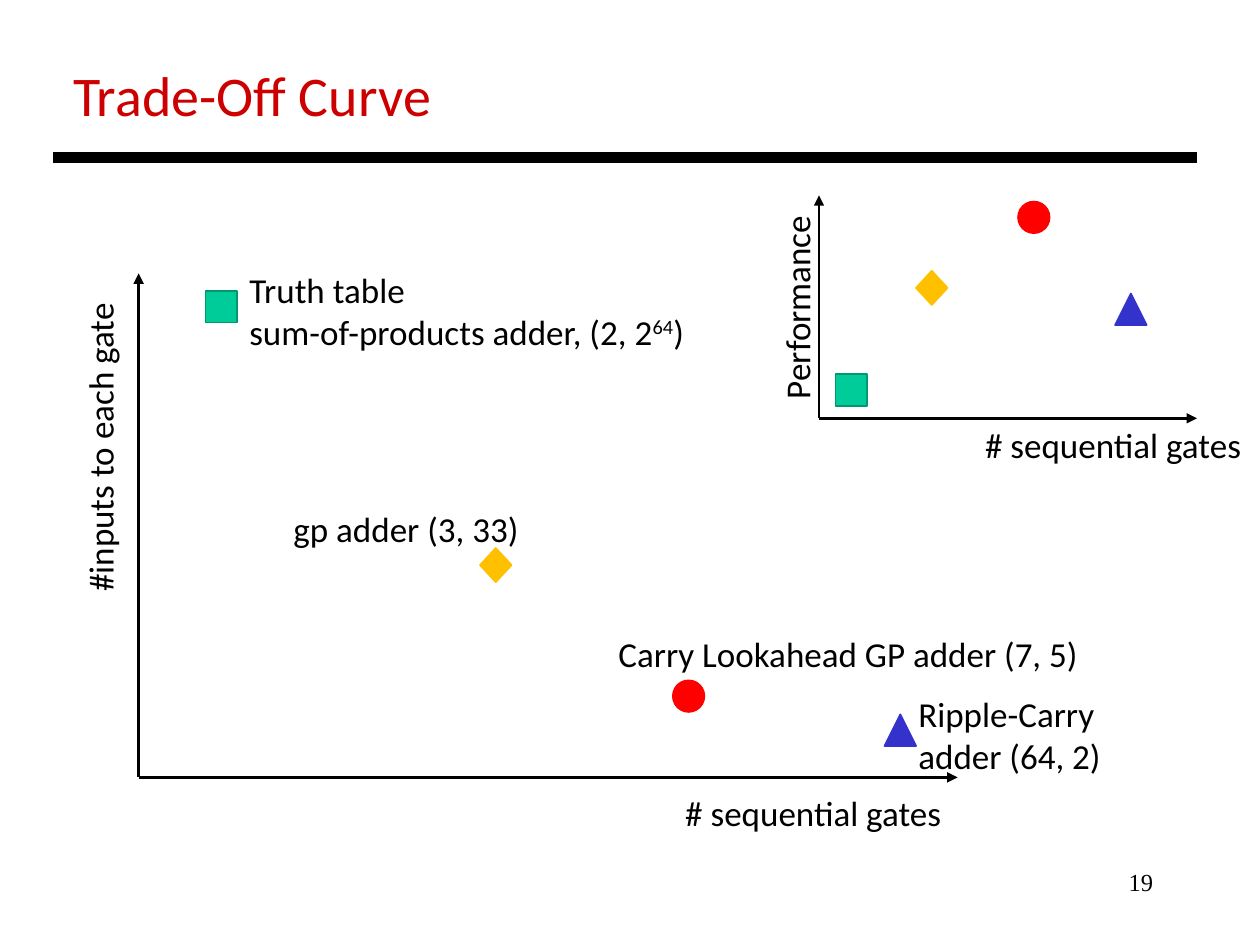
from pptx import Presentation
from pptx.dml.color import RGBColor
from pptx.enum.shapes import MSO_CONNECTOR, MSO_SHAPE
from pptx.enum.text import MSO_ANCHOR, PP_ALIGN
from pptx.oxml.ns import qn
from pptx.util import Inches, Pt
from lxml import etree

COLORS = {
    "black": "000000", "title": "CC0000", "green": "00CC99", "green_edge": "009771",
    "blue": "3333CC", "red": "FF0000", "amber": "FFC000",
}

# One marker per adder: shape, fill, line, height
MARKERS = {
    "truth_table": (MSO_SHAPE.RECTANGLE, "green", "green_edge", 0.25),
    "gp": (MSO_SHAPE.DIAMOND, "amber", "amber", 0.27),
    "lookahead": (MSO_SHAPE.OVAL, "red", "red", 0.25),
    "ripple": (MSO_SHAPE.ISOSCELES_TRIANGLE, "blue", "blue", 0.25),
}


def rgb(name):
    return RGBColor.from_string(COLORS[name])


def write(tf, text, size=20, font="Calibri", color="black", align=PP_ALIGN.LEFT, wrap=False):
    """Fill a text frame; lines split at newlines, ^ toggles superscript."""
    tf.word_wrap = wrap
    tf.vertical_anchor = MSO_ANCHOR.TOP
    for i, line in enumerate(text.split("\n")):
        p = tf.paragraphs[0] if i == 0 else tf.add_paragraph()
        p.alignment = align
        for j, part in enumerate(line.split("^")):
            r = p.add_run()
            r.text = part
            r.font.size = Pt(size)
            r.font.name = font
            r.font.color.rgb = rgb(color)
            if j % 2:
                r._r.get_or_add_rPr().set("baseline", "30000")


class SlideBuilder:
    def __init__(self, slide):
        self.s = slide

    def title(self, text, x, y, w, h):
        sp = self.s.shapes.title
        sp.left, sp.top, sp.width, sp.height = map(Inches, (x, y, w, h))
        write(sp.text_frame, text, size=32, color="title")

    def text(self, text, x, y, w, h=0.44, rotation=0, **fmt):
        sp = self.s.shapes.add_textbox(*map(Inches, (x, y, w, h)))
        sp.rotation = rotation
        write(sp.text_frame, text, **fmt)

    def line(self, x1, y1, x2, y2, width=1.5, arrow=True):
        sp = self.s.shapes.add_connector(
            MSO_CONNECTOR.STRAIGHT, *map(Inches, (x1, y1, x2, y2)))
        sp.line.color.rgb = rgb("black")
        sp.line.width = Pt(width)
        if arrow:
            ln = sp.line._get_or_add_ln()
            etree.SubElement(ln, qn("a:tailEnd"), type="triangle")
        etree.SubElement(sp._element.spPr, qn("a:effectLst"))

    def axes(self, x, y, right, top):
        self.line(x, y, right, y)
        self.line(x, y, x, top)

    def marker(self, kind, x, y):
        shape, fill, edge, h = MARKERS[kind]
        sp = self.s.shapes.add_shape(shape, *map(Inches, (x, y, 0.25, h)))
        sp.shadow.inherit = False
        sp.fill.solid()
        sp.fill.fore_color.rgb = rgb(fill)
        sp.line.color.rgb = rgb(edge)
        sp.line.width = Pt(1)


def main():
    prs = Presentation()
    prs.slide_width, prs.slide_height = Inches(10), Inches(7.5)
    b = SlideBuilder(prs.slides.add_slide(prs.slide_layouts[5]))

    # Title, rule and page number
    b.title("Trade-Off Curve", 0.48, 0.43, 3.08, 0.64)
    b.line(0.42, 1.25, 9.5, 1.25, width=6, arrow=False)
    b.text("19", 7.17, 6.83, 2.08, 0.5, size=14, font="Times New Roman",
           align=PP_ALIGN.RIGHT, wrap=True)

    # Main chart: gate inputs against sequential gates
    b.axes(1.1, 6.17, right=7.6, top=2.17)
    b.text("#inputs to each gate", -0.46, 3.32, 2.51, rotation=270)
    b.text("# sequential gates", 5.34, 6.23, 2.26)
    for kind, x, y in [("truth_table", 1.63, 2.31), ("ripple", 7.02, 5.67),
                       ("lookahead", 5.34, 5.4), ("gp", 3.81, 4.35)]:
        b.marker(kind, x, y)
    b.text("Truth table\nsum-of-products adder, (2, 2^64^)", 1.88, 2.08, 3.71, 0.77)
    b.text("gp adder (3, 33)", 2.23, 3.98, 2.01)
    b.text("Carry Lookahead GP adder (7, 5)", 4.81, 4.97, 3.88)
    b.text("Ripple-Carry\nadder (64, 2)", 7.19, 5.45, 1.66, 0.77)

    # Inset chart: performance against sequential gates
    b.axes(6.5, 3.32, right=9.5, top=1.55)
    b.text("# sequential gates", 7.72, 3.31, 2.26)
    b.text("Performance", 5.49, 2.21, 1.67, rotation=270)
    for kind, x, y in [("truth_table", 6.63, 2.97), ("gp", 7.27, 2.15),
                       ("lookahead", 8.08, 1.6), ("ripple", 8.85, 2.33)]:
        b.marker(kind, x, y)

    prs.save("out.pptx")


if __name__ == "__main__":
    main()
